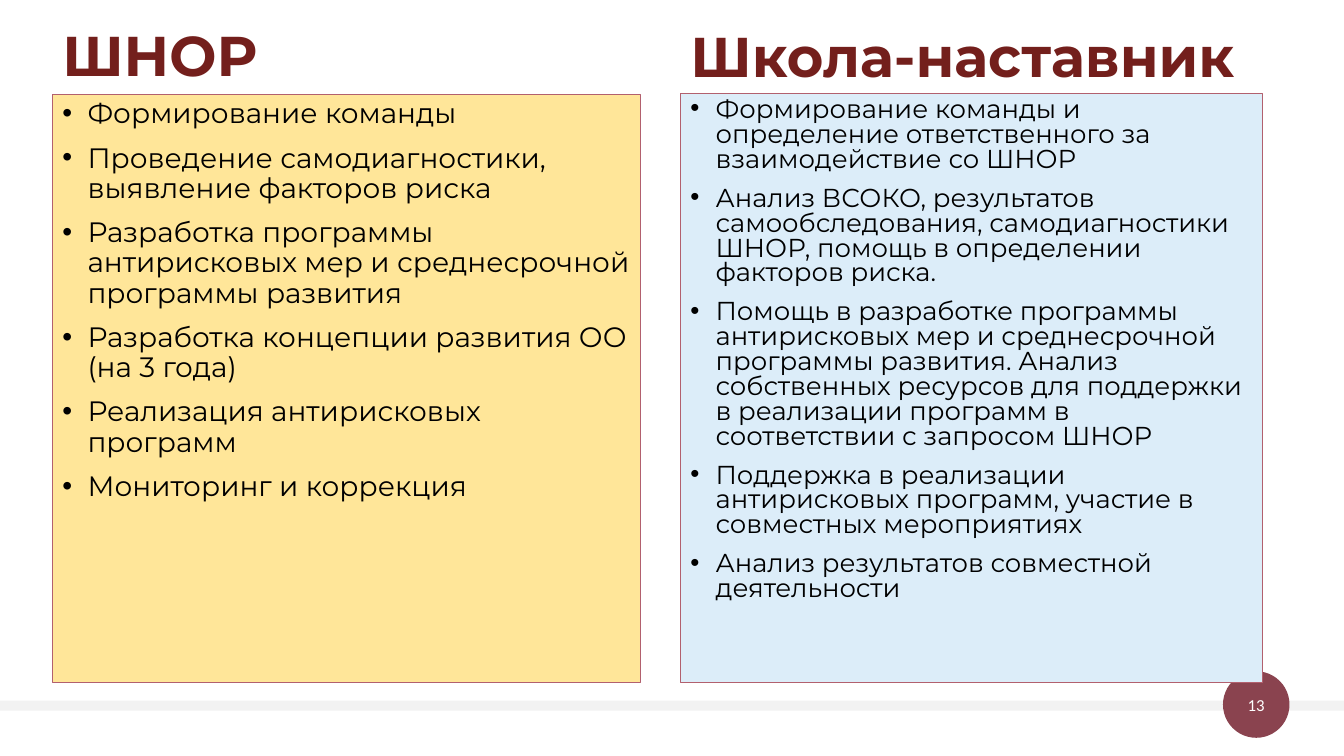
from dataclasses import dataclass

from lxml import etree
from pptx import Presentation
from pptx.dml.color import RGBColor
from pptx.enum import shapes, text
from pptx.oxml import ns
from pptx.util import Inches, Pt


@dataclass(frozen=True)
class Theme:
    font: str = "Montserrat"
    number_font: str = "Calibri"
    heading_size: float = 40
    number_size: float = 12
    heading: str = "731F1C"
    body: str = "000000"
    border: str = "B2606E"
    band: str = "F2F2F2"
    badge: str = "8A434F"
    number: str = "FFFFFF"
    school_fill: str = "FFE699"
    mentor_fill: str = "DCEDF9"


theme = Theme()

columns = [
    {
        "heading": "ШНОР", "left": 0.52, "top": 0.94, "width": 5.83, "heading_top": 0.03,
        "fill": theme.school_fill, "size": 20, "line_spacing": 0.9,
        "items": [
            "Формирование команды",
            "Проведение самодиагностики, выявление факторов риска",
            "Разработка программы антирисковых мер и среднесрочной программы развития",
            "Разработка концепции развития ОО (на 3 года)",
            "Реализация антирисковых программ",
            "Мониторинг и коррекция",
        ],
    },
    {
        "heading": "Школа-наставник", "left": 6.75, "top": 0.93, "width": 5.77, "heading_top": 0.04,
        "fill": theme.mentor_fill, "size": 18.5, "line_spacing": 0.8,
        "items": [
            "Формирование команды и определение ответственного за взаимодействие со ШНОР",
            "Анализ ВСОКО, результатов самообследования, самодиагностики ШНОР, "
            "помощь в определении факторов риска.",
            "Помощь в разработке программы антирисковых мер и среднесрочной программы развития. "
            "Анализ собственных ресурсов для поддержки в реализации программ "
            "в соответствии с запросом ШНОР",
            "Поддержка в реализации антирисковых программ, участие в совместных мероприятиях",
            "Анализ результатов совместной деятельности",
        ],
    },
]
PANEL_BOTTOM = 6.77

presentation = Presentation()
presentation.slide_width = Inches(13.33)
presentation.slide_height = Inches(7.5)
slide = presentation.slides.add_slide(presentation.slide_layouts[6])


def add_filled(kind, left, top, width, height, fill):
    shape = slide.shapes.add_shape(kind, Inches(left), Inches(top), Inches(width), Inches(height))
    shape.shadow.inherit = False
    shape.fill.solid()
    shape.fill.fore_color.rgb = RGBColor.from_string(fill)
    shape.line.fill.background()
    return shape


def set_font(paragraph, name, size, color, bold=False):
    paragraph.font.name = name
    paragraph.font.size = Pt(size)
    paragraph.font.bold = bold
    paragraph.font.color.rgb = RGBColor.from_string(color)


# Footer band and page number
add_filled(shapes.MSO_SHAPE.RECTANGLE, 0, 6.95, 13.33, 0.1, theme.band)
badge = add_filled(shapes.MSO_SHAPE.OVAL, 12.13, 6.66, 0.66, 0.66, theme.badge)
frame = badge.text_frame
frame.margin_left = frame.margin_right = frame.margin_top = frame.margin_bottom = 0
frame.vertical_anchor = text.MSO_ANCHOR.MIDDLE
paragraph = frame.paragraphs[0]
paragraph.text = "13"
paragraph.alignment = text.PP_ALIGN.CENTER
set_font(paragraph, theme.number_font, theme.number_size, theme.number)

# Two headed columns
for column in columns:
    left, top, width = column["left"], column["top"], column["width"]
    heading = slide.shapes.add_textbox(
        Inches(left), Inches(column["heading_top"]), Inches(width), Inches(0.9))
    frame = heading.text_frame
    frame.word_wrap = True
    frame.vertical_anchor = text.MSO_ANCHOR.BOTTOM
    paragraph = frame.paragraphs[0]
    paragraph.text = column["heading"]
    paragraph.line_spacing = 0.9
    set_font(paragraph, theme.font, theme.heading_size, theme.heading, bold=True)

    panel = add_filled(
        shapes.MSO_SHAPE.RECTANGLE, left, top, width, PANEL_BOTTOM - top, column["fill"])
    panel.line.color.rgb = RGBColor.from_string(theme.border)
    panel.line.width = Pt(0.75)
    frame = panel.text_frame
    frame.word_wrap = True
    frame.vertical_anchor = text.MSO_ANCHOR.TOP
    for index, item in enumerate(column["items"]):
        paragraph = frame.paragraphs[0] if index == 0 else frame.add_paragraph()
        paragraph.text = item
        paragraph.alignment = text.PP_ALIGN.LEFT
        paragraph.line_spacing = column["line_spacing"]
        paragraph.space_before = Pt(10)
        set_font(paragraph, theme.font, column["size"], theme.body)
        properties = paragraph._p.get_or_add_pPr()
        properties.set("marL", str(Inches(0.25)))
        properties.set("indent", str(Inches(-0.25)))
        bullet_font = etree.Element(ns.qn("a:buFont"), typeface="Arial")
        bullet = etree.Element(ns.qn("a:buChar"), char="•")
        run_defaults = properties.find(ns.qn("a:defRPr"))
        run_defaults.addprevious(bullet_font)
        run_defaults.addprevious(bullet)

presentation.save("out.pptx")
